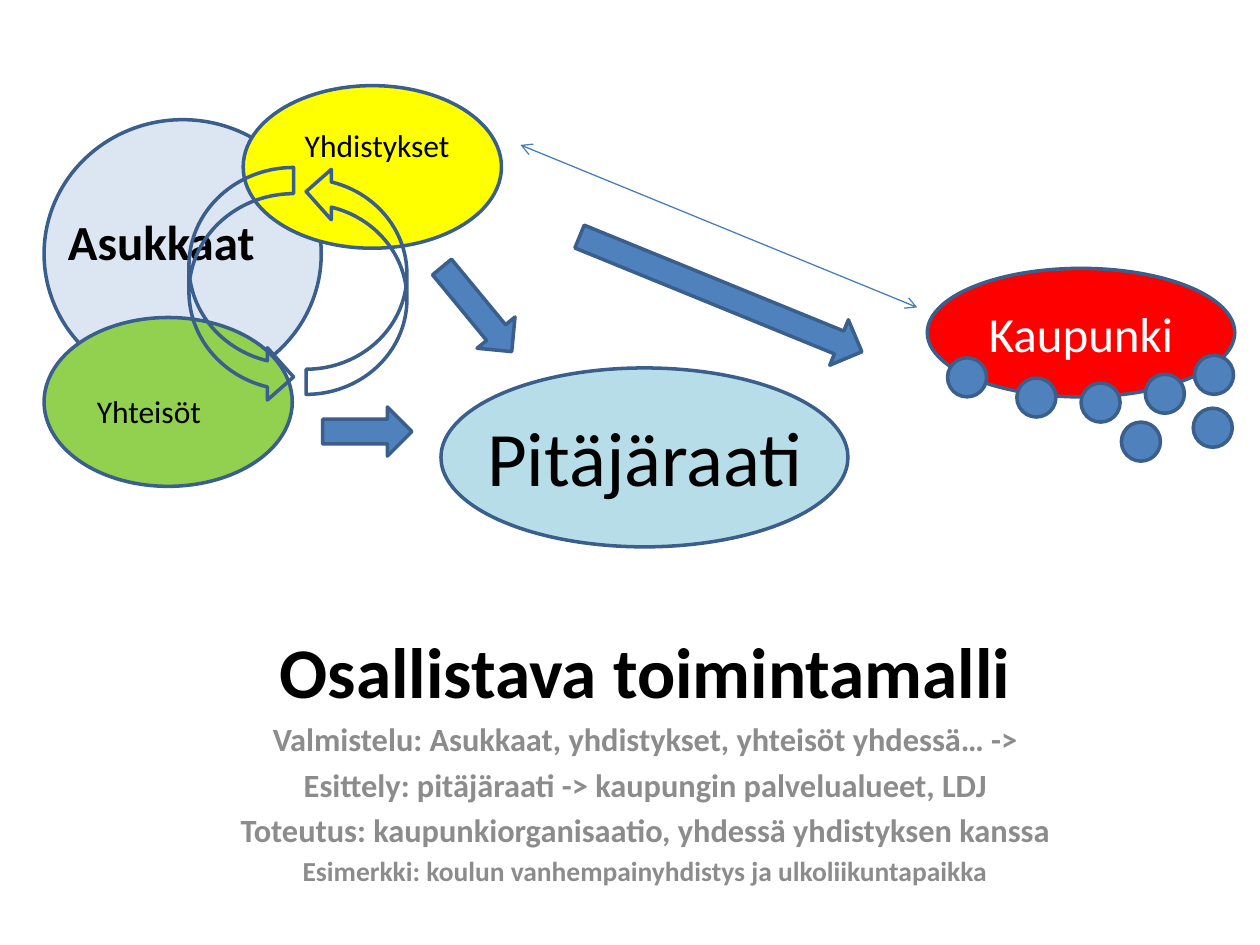
import dataclasses
from typing import Optional

import lxml.etree
import pptx
import pptx.dml.color
import pptx.enum.shapes
import pptx.enum.text
import pptx.oxml.ns
import pptx.util

Inches = pptx.util.Inches
Pt = pptx.util.Pt
Preset = pptx.enum.shapes.MSO_SHAPE
Align = pptx.enum.text.PP_ALIGN
Anchor = pptx.enum.text.MSO_ANCHOR
AutoSize = pptx.enum.text.MSO_AUTO_SIZE
qn = pptx.oxml.ns.qn

COLORS = {
    "residents": "DCE6F2",
    "council": "B7DEE8",
    "city": "FF0000",
    "associations": "FFFF00",
    "communities": "92D050",
    "accent": "4F81BD",
    "outline": "3A5F8C",
    "link": "4B7EBC",
    "black": "000000",
    "white": "FFFFFF",
    "muted": "8C8C8C",
}


@dataclasses.dataclass(frozen=True)
class Figure:
    left: float
    top: float
    width: float
    height: float
    color: Optional[str] = "accent"
    preset: Preset = Preset.OVAL
    rotation: float = 0
    mirrored: bool = False


@dataclasses.dataclass(frozen=True)
class Label:
    text: str
    left: float
    top: float
    width: float
    height: float
    size: float = 18
    bold: bool = False
    wrap: bool = True
    align: Align = Align.LEFT


@dataclasses.dataclass(frozen=True)
class Line:
    text: str
    size: float
    color: str = "muted"
    gap: float = 3.7


RESIDENTS = Figure(0.35, 0.95, 2.2, 2.13, "residents")
COUNCIL = Figure(3.5, 2.92, 3.23, 1.42, "council")
CITY = Figure(7.36, 2.13, 2.44, 1.02, "city")
ASSOCIATIONS = Figure(1.93, 0.68, 2.05, 1.29, "associations")
COMMUNITIES = Figure(0.35, 2.52, 1.97, 1.34, "communities")

LABELS = [
    Label("Asukkaat", 0.43, 1.63, 1.7, 0.57, 28, True, False, Align.CENTER),
    Label("Yhteisöt", 0.67, 3.06, 1.5, 0.4),
    Label("Yhdistykset", 2.32, 0.95, 1.38, 0.4),
]

DOT_SIZE = 0.31
CITY_DOTS = [(7.52, 2.84), (8.07, 3), (8.9, 3.35), (9.47, 3.24),
             (8.58, 3.04), (9.09, 2.97), (9.48, 2.82)]

ARROWS = [
    Figure(3.35, 2.26, 0.87, 0.39, preset=Preset.RIGHT_ARROW, rotation=50.5),
    Figure(4.51, 2.14, 2.42, 0.39, preset=Preset.RIGHT_ARROW, rotation=22.2),
    Figure(2.56, 3.23, 0.71, 0.39, preset=Preset.RIGHT_ARROW),
    Figure(1.5, 1.33, 0.83, 1.87, None, Preset.CURVED_RIGHT_ARROW),
    Figure(2.43, 1.32, 0.8, 1.81, None, Preset.CURVED_LEFT_ARROW, 180, True),
]

MODEL_LINES = [
    Line("Osallistava toimintamalli", 40.7, "black", 0),
    Line("Valmistelu: Asukkaat, yhdistykset, yhteisöt yhdessä… ->", 18.5),
    Line("Esittely: pitäjäraati -> kaupungin palvelualueet, LDJ", 18.5),
    Line("Toteutus: kaupunkiorganisaatio, yhdessä yhdistyksen kanssa", 18.5),
    Line("Esimerkki: koulun vanhempainyhdistys ja ulkoliikuntapaikka", 15.7, gap=3.1),
]


def rgb(name: str) -> pptx.dml.color.RGBColor:
    return pptx.dml.color.RGBColor.from_string(COLORS[name])


def format_paragraph(paragraph, size: float, color: str, bold: bool = False,
                     align: Align = Align.CENTER) -> None:
    paragraph.alignment = align
    paragraph.font.name = "Calibri"
    paragraph.font.size = Pt(size)
    paragraph.font.bold = bold
    paragraph.font.color.rgb = rgb(color)


def draw_figure(slide, figure: Figure):
    shape = slide.shapes.add_shape(
        figure.preset, Inches(figure.left), Inches(figure.top),
        Inches(figure.width), Inches(figure.height))
    shape.shadow.inherit = False
    if figure.color:
        shape.fill.solid()
        shape.fill.fore_color.rgb = rgb(figure.color)
    else:
        shape.fill.background()
    shape.line.color.rgb = rgb("outline")
    shape.line.width = Pt(2)
    shape.rotation = figure.rotation
    if figure.mirrored:
        shape._element.spPr.find(qn("a:xfrm")).set("flipH", "1")
    return shape


def draw_label(slide, label: Label) -> None:
    box = slide.shapes.add_textbox(Inches(label.left), Inches(label.top),
                                   Inches(label.width), Inches(label.height))
    frame = box.text_frame
    frame.word_wrap = label.wrap
    frame.auto_size = AutoSize.SHAPE_TO_FIT_TEXT
    frame.text = label.text
    format_paragraph(frame.paragraphs[0], label.size, "black", label.bold, label.align)


def place_title(slide) -> None:
    title = slide.shapes.title
    title.left, title.top = Inches(0.75), Inches(2.36)
    title.width, title.height = Inches(8.5), Inches(1.74)
    frame = title.text_frame
    frame.text = "Pitäjäraati"
    frame.auto_size = AutoSize.NONE
    frame.vertical_anchor = Anchor.BOTTOM
    frame.margin_left = Inches(0.34)
    frame.margin_bottom = Inches(0.12)
    format_paragraph(frame.paragraphs[0], 44, "black")
    slide.shapes._spTree.append(title._element)


def draw_model(slide) -> None:
    box = slide.shapes.add_textbox(Inches(1.62), Inches(4.93), Inches(7), Inches(1.97))
    frame = box.text_frame
    frame.word_wrap = True
    frame.text = "\n".join(line.text for line in MODEL_LINES)
    for paragraph, line in zip(frame.paragraphs, MODEL_LINES):
        format_paragraph(paragraph, line.size, line.color, True)
        paragraph.space_before = Pt(line.gap)


def draw_link(slide) -> None:
    link = slide.shapes.add_connector(
        pptx.enum.shapes.MSO_CONNECTOR.STRAIGHT,
        Inches(4.13), Inches(1.15), Inches(7.28), Inches(2.44))
    link.line.color.rgb = rgb("link")
    link.line.width = Pt(0.75)
    outline = link.line._get_or_add_ln()
    for end in ("a:headEnd", "a:tailEnd"):
        lxml.etree.SubElement(outline, qn(end), type="arrow")
    lxml.etree.SubElement(link._element.spPr, qn("a:effectLst"))


def main() -> None:
    deck = pptx.Presentation()
    deck.slide_width, deck.slide_height = Inches(10), Inches(7.5)
    slide = deck.slides.add_slide(deck.slide_layouts[5])

    draw_figure(slide, RESIDENTS)
    draw_figure(slide, COUNCIL)
    place_title(slide)
    draw_model(slide)

    city = draw_figure(slide, CITY).text_frame
    city.text = "Kaupunki"
    city.vertical_anchor = Anchor.MIDDLE
    format_paragraph(city.paragraphs[0], 28, "white")

    draw_figure(slide, ASSOCIATIONS)
    draw_figure(slide, COMMUNITIES)
    for label in LABELS:
        draw_label(slide, label)
    for left, top in CITY_DOTS:
        draw_figure(slide, Figure(left, top, DOT_SIZE, DOT_SIZE))
    for arrow in ARROWS:
        draw_figure(slide, arrow)
    draw_link(slide)

    deck.save("out.pptx")


if __name__ == "__main__":
    main()
